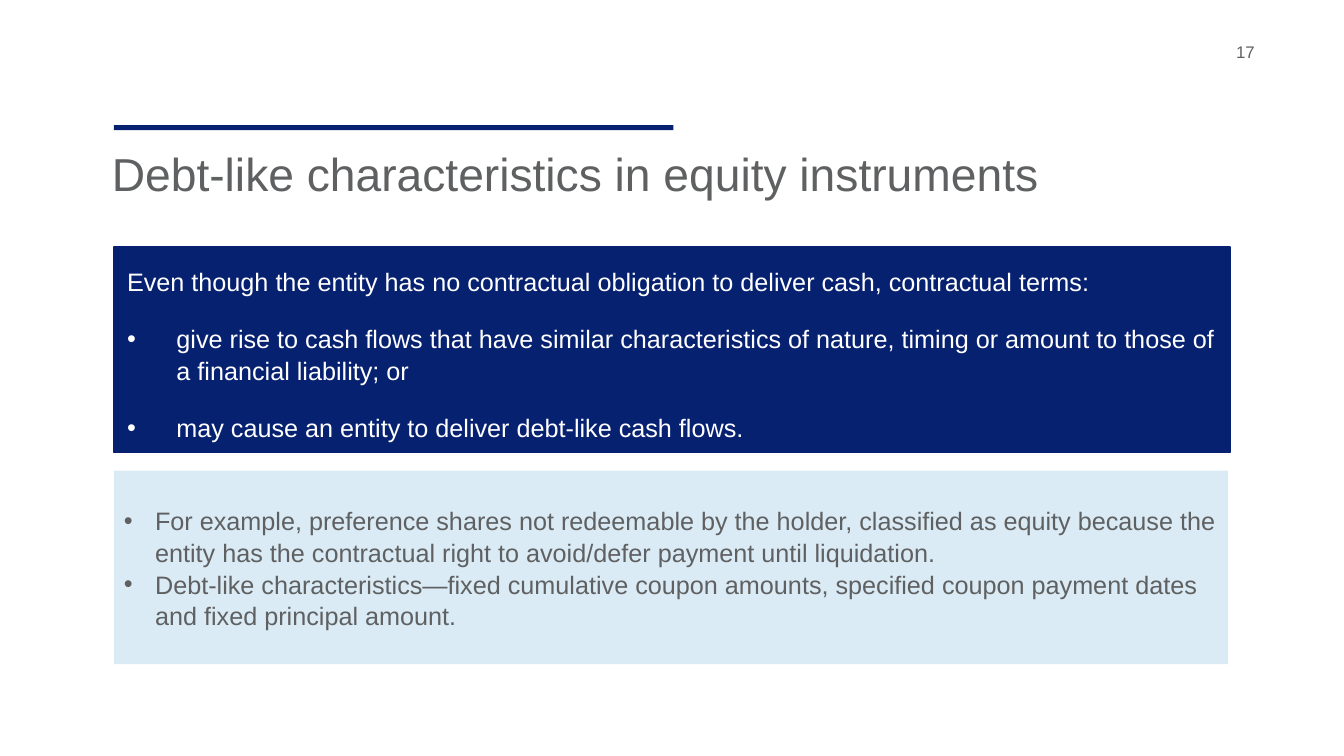
import lxml.etree
import pptx
import pptx.dml.color
import pptx.enum.shapes
import pptx.enum.text
import pptx.oxml.ns
import pptx.util

PX = 9144  # EMU per px, at 100 px to the inch
NAVY, PALE, GREY, WHITE = "072171", "DAEBF5", "5F6061", "FFFFFF"
LEFT = 113
TOP = pptx.enum.text.MSO_ANCHOR.TOP
MIDDLE = pptx.enum.text.MSO_ANCHOR.MIDDLE

TERMS = [
    ("Even though the entity has no contractual obligation to deliver cash, contractual terms:", False),
    ("give rise to cash flows that have similar characteristics of nature, timing or amount "
     "to those of a financial liability; or", True),
    ("may cause an entity to deliver debt-like cash flows.", True),
]
EXAMPLES = [
    ("For example, preference shares not redeemable by the holder, classified as equity because "
     "the entity has the contractual right to avoid/defer payment until liquidation.", True),
    ("Debt-like characteristics—fixed cumulative coupon amounts, specified coupon payment dates "
     "and fixed principal amount.", True),
]


def color(value):
    return pptx.dml.color.RGBColor.from_string(value)


class SlideBuilder:
    font = "Arial"

    def __init__(self, slide):
        self.slide = slide

    def panel(self, left, top, width, height, fill, line=None):
        shape = self.slide.shapes.add_shape(
            pptx.enum.shapes.MSO_SHAPE.RECTANGLE, left * PX, top * PX, width * PX, height * PX)
        shape.shadow.inherit = False
        shape.fill.solid()
        shape.fill.fore_color.rgb = color(fill)
        if line:
            shape.line.color.rgb = color(line)
            shape.line.width = pptx.util.Pt(1)
        else:
            shape.line.fill.background()
        return shape

    def text_box(self, left, top, width, height):
        return self.slide.shapes.add_textbox(left * PX, top * PX, width * PX, height * PX)

    def add_text(self, shape, items, size, ink, indent=0, before=0, after=0,
                 spacing=1.0, inset=(0, 0), anchor=TOP):
        """Fill a shape with (text, bulleted) paragraphs; inset is (sides, top and bottom)."""
        frame = shape.text_frame
        frame.word_wrap = True
        frame.vertical_anchor = anchor
        frame.margin_left = frame.margin_right = inset[0] * PX
        frame.margin_top = frame.margin_bottom = inset[1] * PX
        for index, (text, bulleted) in enumerate(items):
            para = frame.add_paragraph() if index else frame.paragraphs[0]
            para.alignment = pptx.enum.text.PP_ALIGN.LEFT
            para.line_spacing = spacing
            para.space_before = pptx.util.Pt(before if index else 0)
            para.space_after = pptx.util.Pt(after)
            if bulleted:
                self.bullet(para, indent)
            span = para.add_run()
            span.text = text
            span.font.name = self.font
            span.font.size = pptx.util.Pt(size)
            span.font.color.rgb = color(ink)

    def bullet(self, para, indent):
        """Give a paragraph a bullet that hangs by indent px."""
        properties = para._p.get_or_add_pPr()
        properties.set("marL", str(indent * PX))
        properties.set("indent", str(-indent * PX))
        qn = pptx.oxml.ns.qn
        lxml.etree.SubElement(properties, qn("a:buFont")).set("typeface", self.font)
        lxml.etree.SubElement(properties, qn("a:buChar")).set("char", "•")


def main():
    deck = pptx.Presentation()
    deck.slide_width = pptx.util.Inches(13.33)
    deck.slide_height = pptx.util.Inches(7.5)
    page = SlideBuilder(deck.slides.add_slide(deck.slide_layouts[6]))

    page.panel(LEFT, 124, 555, 5, NAVY)
    title = page.text_box(111, 144, 1114, 80)
    page.add_text(title, [("Debt-like characteristics in equity instruments", False)], 33, GREY)
    number = page.text_box(1226, 41, 67, 29)
    page.add_text(number, [("17", False)], 12, GREY)

    page.panel(LEFT, 245, 1107, 204, NAVY, line="072071")
    terms = page.text_box(126, 263, 1081, 186)
    page.add_text(terms, TERMS, 18, WHITE, indent=49, before=10, after=8, spacing=1.05)

    examples = page.panel(LEFT, 467, 1105, 192, PALE)
    page.add_text(examples, EXAMPLES, 18, GREY, indent=31, spacing=1.05, inset=(10, 5), anchor=MIDDLE)

    deck.save("out.pptx")


if __name__ == "__main__":
    main()
